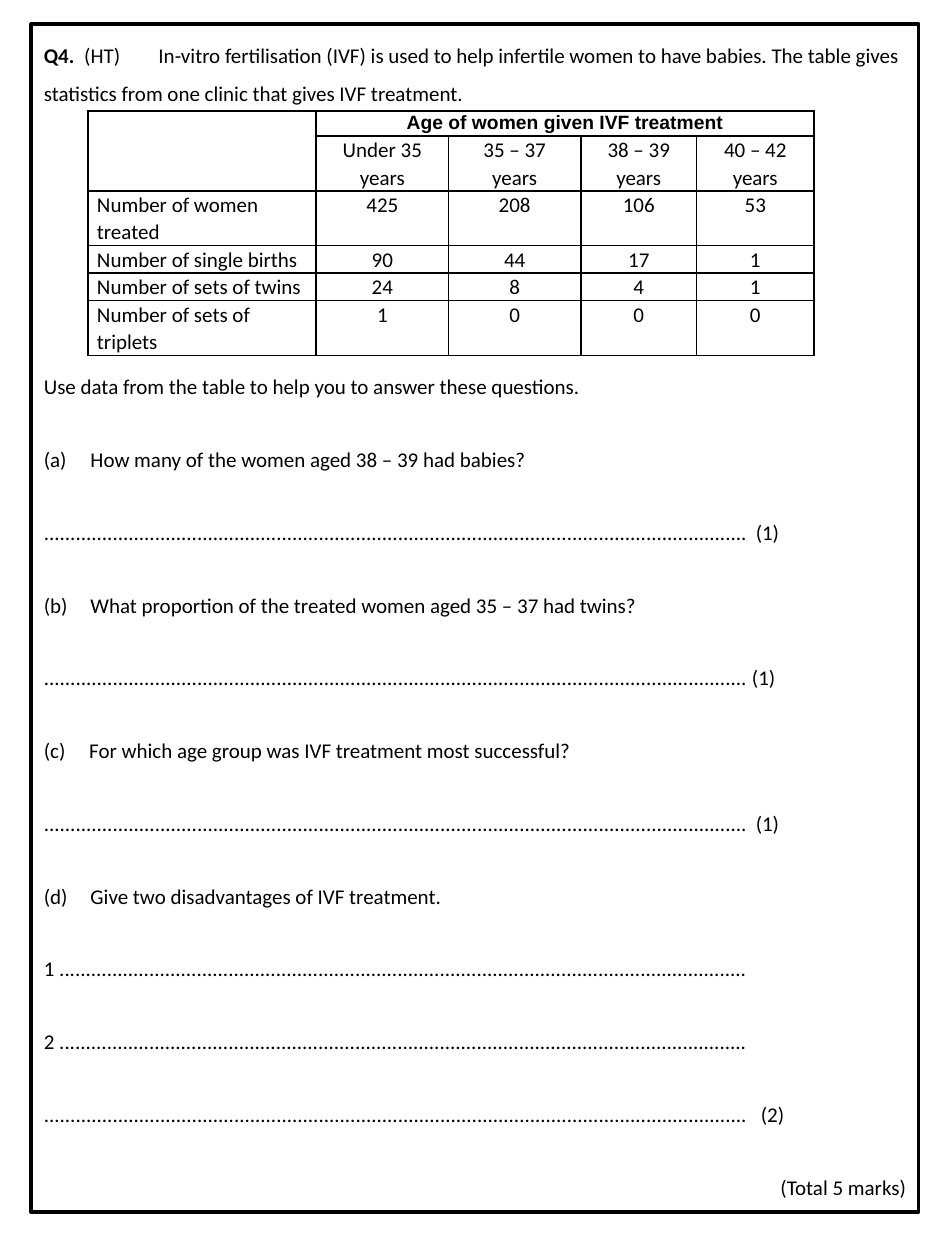
from lxml import etree
from pptx import Presentation
from pptx import util as u
from pptx.dml.color import RGBColor
from pptx.enum import shapes, text
from pptx.oxml.ns import qn

WIDE, HIGH = 750, 1000
UNIT = u.Inches(7.5) // WIDE
INK = "000000"
LEFT, MID, RIGHT = text.PP_ALIGN.LEFT, text.PP_ALIGN.CENTER, text.PP_ALIGN.RIGHT
BODY = {"name": "Calibri", "size": u.Pt(12), "bold": False}
BOLD = {**BODY, "bold": True}
HEAD = {"name": "Arial", "size": u.Pt(11), "bold": True}
PACE = {"line_spacing": 1.5, "space_before": u.Pt(12), "space_after": u.Pt(8)}
GAP = u.Pt(138)
DOTS = "." * 133
SHORT = "." * 130

INTRO = ("\t(HT)\tIn-vitro fertilisation (IVF) is used to help infertile women to have babies. "
         "The table gives statistics from one clinic that gives IVF treatment.")
LINES = [
    ("Use data from the table to help you to answer these questions.", []),
    ("(a)\tHow many of the women aged 38 – 39 had babies?", [37]),
    (DOTS + "\t(1)", [565]),
    ("(b)\tWhat proportion of the treated women aged 35 – 37 had twins?", [37]),
    (DOTS + "\t(1)", [562]),
    ("(c)\tFor which age group was IVF treatment most successful?", [36]),
    (DOTS + "\t(1)", [565]),
    ("(d)\tGive two disadvantages of IVF treatment.", [37]),
    ("1 " + SHORT, []),
    ("2 " + SHORT, []),
    (DOTS + "\t(2)", [569]),
]
COLS = [181, 105, 105, 92, 93]
ROWS = [20, 43, 43, 21, 21, 43]
DATA = [
    ["", "Age of women given IVF treatment", "", "", ""],
    ["", "Under 35\vyears", "35 – 37\vyears", "38 – 39\vyears", "40 – 42\vyears"],
    ["Number of women treated", "425", "208", "106", "53"],
    ["Number of single births", "90", "44", "17", "1"],
    ["Number of sets of twins", "24", "8", "4", "1"],
    ["Number of sets of triplets", "1", "0", "0", "0"],
]


def tint(code):
    """Turn a hex string into a colour."""
    return RGBColor.from_string(code)


def apply(item, look):
    """Set each attribute of a format dict."""
    for key, value in look.items():
        setattr(item, key, value)


def span(*cells):
    """Turn grid units into lengths."""
    return [UNIT * cell for cell in cells]


def ink(run, look):
    """Give a run its font and colour."""
    apply(run.font, look)
    run.font.color.rgb = tint(INK)


def stops(para, marks):
    """Set the tab stops of a paragraph."""
    if marks:
        tabs = etree.SubElement(para._p.get_or_add_pPr(), qn("a:tabLst"))
        for mark in span(*marks):
            etree.SubElement(tabs, qn("a:tab"), pos=str(mark), algn="l")


def add_line(frame, words, marks=(), align=LEFT, **pace):
    """Add one spaced paragraph to the sheet."""
    para = frame.add_paragraph()
    apply(para, {**PACE, "alignment": align, **pace})
    stops(para, marks)
    run = para.add_run()
    run.text = words
    ink(run, BODY)


def add_sheet(slide, box):
    """Draw the framed sheet with its questions."""
    sheet = slide.shapes.add_shape(shapes.MSO_SHAPE.RECTANGLE, *span(*box))
    sheet.shadow.inherit = False
    sheet.fill.background()
    sheet.line.color.rgb = tint(INK)
    sheet.line.width = u.Pt(2.25)
    frame = sheet.text_frame
    apply(frame, {"word_wrap": True, "vertical_anchor": text.MSO_ANCHOR.TOP})
    first = frame.paragraphs[0]
    apply(first, {**PACE, "alignment": LEFT})
    stops(first, [32, 91])
    for words, look in (("Q4.", BOLD), (INTRO, BODY)):
        run = first.add_run()
        run.text = words
        ink(run, look)
    for order, (words, marks) in enumerate(LINES):
        add_line(frame, words, marks, **({} if order else {"space_before": GAP}))
    add_line(frame, "(Total 5 marks)", align=RIGHT)


def edge(cell, sides):
    """Draw the chosen sides of a cell."""
    props = cell._tc.get_or_add_tcPr()
    for side in "LRTB":
        shown = side in sides
        line = etree.SubElement(props, qn("a:ln" + side), w=str(u.Pt(1) if shown else 0))
        fill = etree.SubElement(line, qn("a:solidFill" if shown else "a:noFill"))
        if shown:
            etree.SubElement(fill, qn("a:srgbClr"), val=INK)


def fill_cell(cell, words, look, align):
    """Write a cell in its font."""
    pad = UNIT * 7
    apply(cell, {"margin_left": pad, "margin_right": pad, "margin_top": 0, "margin_bottom": 0})
    para = cell.text_frame.paragraphs[0]
    para.text = words
    apply(para, {"alignment": align, "line_spacing": 1.07})
    for run in para.runs:
        ink(run, look)
    size = str(int(look["size"].pt * 100))
    for gap in para._p.findall(qn("a:br")):
        etree.SubElement(gap, qn("a:rPr"), sz=size)
    if not words:
        etree.SubElement(para._p, qn("a:endParaRPr"), sz=size)


def add_stats(slide, box):
    """Build the table of clinic results."""
    table = slide.shapes.add_table(len(ROWS), len(COLS), *span(*box)).table
    apply(table, {"first_row": False, "horz_banding": False})
    for col, width in zip(table.columns, span(*COLS)):
        col.width = width
    for row, height in zip(table.rows, span(*ROWS)):
        row.height = height
    for r, row in enumerate(DATA):
        for c, words in enumerate(row):
            cell = table.cell(r, c)
            fill_cell(cell, words, BODY if r else HEAD, MID if c else LEFT)
            edge(cell, {(0, 0): "LRT", (1, 0): "LRB"}.get((r, c), "LRTB"))
            cell.fill.background()
    table.cell(0, 1).merge(table.cell(0, len(COLS) - 1))


def main():
    """Make the worksheet slide."""
    deck = Presentation()
    deck.slide_width, deck.slide_height = span(WIDE, HIGH)
    slide = deck.slides.add_slide(deck.slide_layouts[6])
    add_sheet(slide, (25, 19, 704, 943))
    add_stats(slide, (70, 88, sum(COLS), sum(ROWS)))
    deck.save("out.pptx")


if __name__ == "__main__":
    main()
